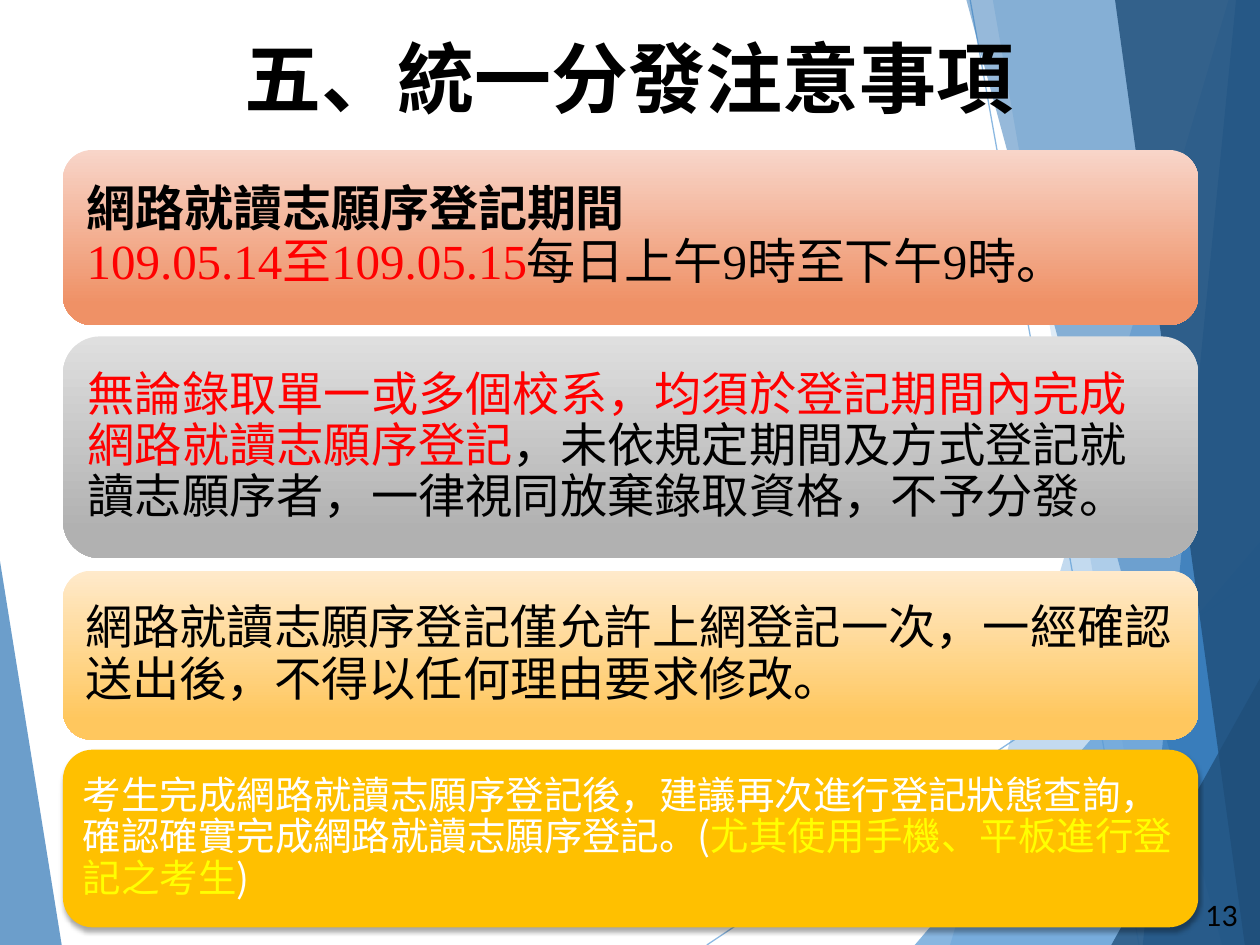
from lxml.etree import SubElement
from pptx import Presentation
from pptx.dml.color import RGBColor
from pptx.enum.shapes import MSO_CONNECTOR, MSO_SHAPE
from pptx.enum.text import MSO_ANCHOR, PP_ALIGN
from pptx.oxml.ns import qn
from pptx.util import Inches, Pt

BLACK = RGBColor(0x00, 0x00, 0x00)
WHITE = RGBColor(0xFF, 0xFF, 0xFF)
RED = RGBColor(0xFF, 0x00, 0x00)
YELLOW = RGBColor(0xFF, 0xFF, 0x00)
AMBER = RGBColor(0xFF, 0xC0, 0x00)
LIGHT_BLUE = RGBColor(0x5B, 0x9B, 0xD5)
MID_BLUE = RGBColor(0x2E, 0x75, 0xB6)
DARK_BLUE = RGBColor(0x1F, 0x4E, 0x79)
PEACH = (RGBColor(0xF8, 0xD5, 0xC9), RGBColor(0xEF, 0x91, 0x66))
GREY = (RGBColor(0xDF, 0xDF, 0xDF), RGBColor(0xB1, 0xB1, 0xB1))
CREAM = (RGBColor(0xFF, 0xEA, 0xCB), RGBColor(0xFF, 0xC7, 0x5E))
CJK_FONT = "Noto Sans CJK SC"
SERIF_FONT = "Times New Roman"


def set_alpha(element, percent):
    """Give the colour inside a fill or line element an opacity."""
    color = element.find(".//" + qn("a:srgbClr"))
    SubElement(color, qn("a:alpha"), val=str(percent * 1000))


def style_run(span, font_name, size, color, bold=False):
    span.font.name = font_name
    span.font.size = Pt(size)
    span.font.color.rgb = color
    span.font.bold = bold
    SubElement(span.font._element, qn("a:ea"), typeface=CJK_FONT)


deck = Presentation()
deck.slide_width, deck.slide_height = Inches(10), Inches(7.5)
slide = deck.slides.add_slide(deck.slide_layouts[5])
shapes = slide.shapes

# Background rays and facets
for x1, y1, x2, y2 in [(5.61, 7.5, 10, 4.57), (7.7, 0, 9.04, 7.5)]:
    ray = shapes.add_connector(
        MSO_CONNECTOR.STRAIGHT, Inches(x1), Inches(y1), Inches(x2), Inches(y2))
    ray.line.color.rgb = LIGHT_BLUE
    ray.line.width = Pt(0.75)
    properties = ray._element.spPr
    set_alpha(properties, 70)
    SubElement(properties, qn("a:effectLst"))

facets = [
    (LIGHT_BLUE, 36, [(9.75, 0), (7.54, 7.5), (10.02, 7.5), (10.02, 0)]),
    (LIGHT_BLUE, 20, [(7.88, 0), (9.19, 7.5), (10.01, 7.5), (10.01, 0)]),
    (LIGHT_BLUE, 72, [(7.26, 7.5), (10.01, 4.29), (10.01, 7.5)]),
    (MID_BLUE, 50, [(7.67, 0), (9.7, 7.5), (10.01, 7.5), (10.01, 0)]),
    (MID_BLUE, 66, [(9.81, 0), (9.07, 7.5), (10.01, 7.5), (10.01, 0)]),
    (DARK_BLUE, 80, [(8.85, 0), (9.88, 7.5), (10.02, 7.5), (10.02, 0)]),
    (DARK_BLUE, 76, [(8.82, 7.5), (10.02, 5.35), (10.02, 7.5)]),
    (MID_BLUE, 70, [(-0.01, 4.39), (0.49, 7.5), (-0.01, 7.5)]),
]
for color, opacity, corners in facets:
    points = [(Inches(x), Inches(y)) for x, y in corners]
    builder = shapes.build_freeform(*points[0])
    builder.add_line_segments(points[1:], close=True)
    facet = builder.convert_to_shape()
    facet.shadow.inherit = False
    facet.fill.solid()
    facet.fill.fore_color.rgb = color
    set_alpha(facet._element.spPr, opacity)
    facet.line.fill.background()

# Page number
number = shapes.add_textbox(Inches(9.47), Inches(7.08), Inches(0.52), Inches(0.37))
number.text_frame.word_wrap = True
number.text_frame.text = "13"
style_run(number.text_frame.paragraphs[0].runs[0], "Lato", 16, BLACK)

# Title, brought in front of the background
title = shapes.title
shapes._spTree.append(title._element)
title.left, title.top = Inches(0.45), Inches(0.3)
title.width, title.height = Inches(9.09), Inches(0.61)
title.text_frame.text = "五、統一分發注意事項"
title.text_frame.vertical_anchor = MSO_ANCHOR.MIDDLE
heading = title.text_frame.paragraphs[0]
heading.alignment = PP_ALIGN.CENTER
style_run(heading.runs[0], CJK_FONT, 44, BLACK, True)

# Notice boxes: top, height, fill, inset, font, size, lines of (text, colour, bold)
notices = [
    (1.19, 1.39, PEACH, 0.12, SERIF_FONT, 28, [
        [("網路就讀志願序登記期間", BLACK, True)],
        [("109.05.14至109.05.15", RED, False),
         ("每日上午9時至下午9時。", BLACK, False)]]),
    (2.67, 1.76, GREY, 0.11, SERIF_FONT, 27, [
        [("無論錄取單一或多個校系，均須於登記期間內完成網路就讀志願序登記", RED, False),
         ("，未依規定期間及方式登記就讀志願序者，一律視同放棄錄取資格，不予分發。",
          BLACK, False)]]),
    (4.53, 1.34, CREAM, 0.11, SERIF_FONT, 27, [
        [("網路就讀志願序登記僅允許上網登記一次，一經確認送出後，不得以任何理由要求修改。",
          BLACK, False)]]),
    (5.95, 1.41, AMBER, 0.09, CJK_FONT, 22, [
        [("考生完成網路就讀志願序登記後，建議再次進行登記狀態查詢，"
          "確認確實完成網路就讀志願序登記。(", WHITE, False),
         ("尤其使用手機、平板進行登記之考生", YELLOW, False),
         (")", WHITE, False)]]),
]
for top, height, fill, inset, font_name, size, lines in notices:
    box = shapes.add_shape(
        MSO_SHAPE.ROUNDED_RECTANGLE, Inches(0.5), Inches(top), Inches(9.01), Inches(height))
    box.shadow.inherit = False
    box.line.fill.background()
    if fill == AMBER:
        box.fill.solid()
        box.fill.fore_color.rgb = fill
        effects = box._element.spPr.find(qn("a:effectLst"))
        shadow = SubElement(effects, qn("a:outerShdw"), blurRad=str(Pt(3)),
                            dist=str(Pt(2)), dir="5400000", rotWithShape="0")
        SubElement(shadow, qn("a:srgbClr"), val=str(BLACK))
        set_alpha(shadow, 35)
    else:
        box.fill.gradient()
        box.fill.gradient_angle = 270
        for stop, color, position in zip(box.fill.gradient_stops, fill, (0, 0.88)):
            stop.color.rgb = color
            stop.position = position

    frame = box.text_frame
    frame.word_wrap = True
    frame.vertical_anchor = MSO_ANCHOR.MIDDLE
    frame.margin_left = frame.margin_right = Inches(inset)
    frame.margin_top = frame.margin_bottom = Inches(inset)
    para = frame.paragraphs[0]
    para.alignment = PP_ALIGN.LEFT
    para.line_spacing = 0.9
    for index, line in enumerate(lines):
        if index:
            para.add_line_break()
        for text, color, bold in line:
            span = para.add_run()
            span.text = text
            style_run(span, font_name, size, color, bold)

deck.save("out.pptx")
